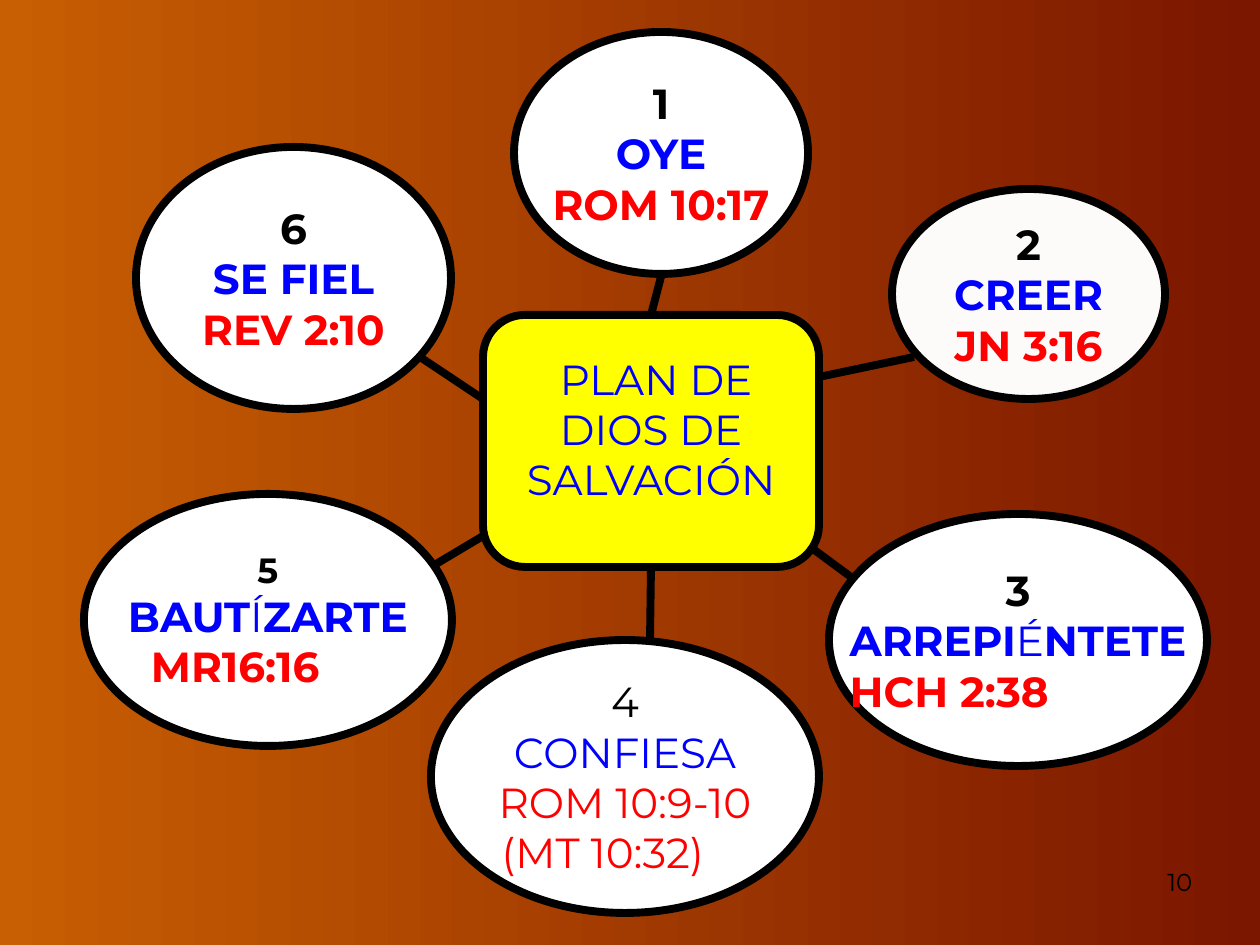
from dataclasses import dataclass

from lxml.etree import SubElement
from pptx import Presentation
from pptx.dml.color import RGBColor
from pptx.enum.shapes import MSO_CONNECTOR, MSO_SHAPE
from pptx.enum.text import MSO_ANCHOR, PP_ALIGN
from pptx.oxml.ns import qn
from pptx.util import Pt

EMU_PER_PX = 914400 / 126
TOP, BOTTOM = 0, 2


@dataclass(frozen=True)
class Theme:
    font: str = "Montserrat"
    gradient: tuple = ("C85F02", "7B1600")
    outline: str = "000000"
    number: str = "000000"
    action: str = "0000FF"
    verse: str = "FF0000"
    white: str = "FFFFFF"
    off_white: str = "FCFBF9"
    plan: str = "FFFF00"
    body_size: int = 24
    small_size: int = 20
    page_size: int = 14
    line_width: float = 4.5


THEME = Theme()


@dataclass(frozen=True)
class Step:
    number: str
    box: tuple
    action: tuple  # pieces of the word, alternately bold and regular
    verses: tuple  # (text, alignment, indent in px)
    bold: bool = True
    fill: str = THEME.white
    number_size: int = THEME.body_size


CENTER, LEFT = PP_ALIGN.CENTER, PP_ALIGN.LEFT

STEPS = (
    Step("1", (514, 32, 294, 242), ("OYE",), (("ROM 10:17", CENTER, 0),)),
    Step("2", (892, 189, 273, 210), ("CREER",), (("JN 3:16", CENTER, 0),), fill=THEME.off_white),
    Step("3", (829, 514, 378, 252), ("ARREPI", "É", "NTETE"), (("HCH 2:38", LEFT, 0),)),
    Step("4", (431, 640, 388, 273), ("CONFIESA",),
         (("ROM 10:9-10", CENTER, 0), ("(MT 10:32)", LEFT, 14)), bold=False),
    Step("5", (84, 494, 368, 252), ("BAUT", "Í", "ZARTE"), (("MR16:16", LEFT, 23),),
         number_size=THEME.small_size),
    Step("6", (136, 147, 315, 262), ("SE FIEL",), (("REV 2:10", CENTER, 0),)),
)
PLAN_BOX = (483, 315, 336, 252)
PAGE_NUMBER_BOX = (1155, 861, 73, 43)
# (start, end, side of the plan box that the start is joined to)
SPOKES = (
    ((651, 315), (662, 273), TOP),
    ((819, 377), (914, 357), None),
    ((809, 546), (851, 577), None),
    ((651, 567), (650, 641), BOTTOM),
    ((483, 536), (431, 567), None),
    ((483, 399), (420, 357), None),
)


def px(*lengths):
    return [round(length * EMU_PER_PX) for length in lengths]


def color(value):
    return RGBColor.from_string(value)


def add_text(paragraph, text, *, fill, size=THEME.body_size, bold=False, align=LEFT,
             margin=0, indent=0):
    """Append a run; margin and first-line indent are in px."""
    paragraph.alignment = align
    if margin or indent:
        properties = paragraph._p.get_or_add_pPr()
        properties.set("marL", str(px(margin)[0]))
        properties.set("indent", str(px(indent)[0]))
    run = paragraph.add_run()
    run.text = text
    run.font.name = THEME.font
    run.font.size = Pt(size)
    run.font.bold = bold
    run.font.color.rgb = color(fill)


def add_outlined(slide, kind, box, fill):
    shape = slide.shapes.add_shape(kind, *px(*box))
    shape.shadow.inherit = False
    shape.fill.solid()
    shape.fill.fore_color.rgb = color(fill)
    shape.line.color.rgb = color(THEME.outline)
    shape.line.width = Pt(THEME.line_width)
    return shape


def add_text_box(slide, box):
    frame = slide.shapes.add_textbox(*px(*box)).text_frame
    frame.word_wrap = True
    return frame.paragraphs[0]


def add_step(slide, step):
    frame = add_outlined(slide, MSO_SHAPE.OVAL, step.box, step.fill).text_frame
    frame.word_wrap = False
    frame.vertical_anchor = MSO_ANCHOR.MIDDLE
    frame.margin_left = frame.margin_top = frame.margin_right = frame.margin_bottom = 0
    add_text(frame.paragraphs[0], step.number, fill=THEME.number, size=step.number_size,
             bold=step.bold, align=CENTER)
    action = frame.add_paragraph()
    for index, piece in enumerate(step.action):
        add_text(action, piece, fill=THEME.action, bold=step.bold and index % 2 == 0,
                 align=CENTER)
    for text, align, margin in step.verses:
        add_text(frame.add_paragraph(), text, fill=THEME.verse, bold=step.bold,
                 align=align, margin=margin)


def add_plan(slide, box):
    left, top, width, height = box
    shape = add_outlined(slide, MSO_SHAPE.ROUNDED_RECTANGLE, box, THEME.plan)
    paragraph = add_text_box(slide, (left, top + 32, width, height - 48))
    add_text(paragraph, "PLAN DE DIOS DE SALVACIÓN", fill=THEME.action, align=CENTER, indent=10)
    return shape


def add_spoke(slide, plan, start, end, side):
    connector = slide.shapes.add_connector(MSO_CONNECTOR.STRAIGHT, *px(*start, *end))
    connector.line.color.rgb = color(THEME.outline)
    connector.line.width = Pt(THEME.line_width)
    SubElement(connector._element.spPr, qn("a:effectLst"))
    if side is not None:
        connector.begin_connect(plan, side)


def add_page_number(slide, box):
    add_text(add_text_box(slide, box), "10", fill=THEME.number, size=THEME.page_size)


def paint_background(slide):
    fill = slide.background.fill
    fill.gradient()
    fill.gradient_angle = 0
    for stop, value in zip(fill.gradient_stops, THEME.gradient):
        stop.color.rgb = color(value)


def main():
    presentation = Presentation()
    presentation.slide_width, presentation.slide_height = px(1260, 945)
    slide = presentation.slides.add_slide(presentation.slide_layouts[6])
    paint_background(slide)
    for step in STEPS:
        add_step(slide, step)
    plan = add_plan(slide, PLAN_BOX)
    for start, end, side in SPOKES:
        add_spoke(slide, plan, start, end, side)
    add_page_number(slide, PAGE_NUMBER_BOX)
    presentation.save("out.pptx")


if __name__ == "__main__":
    main()
